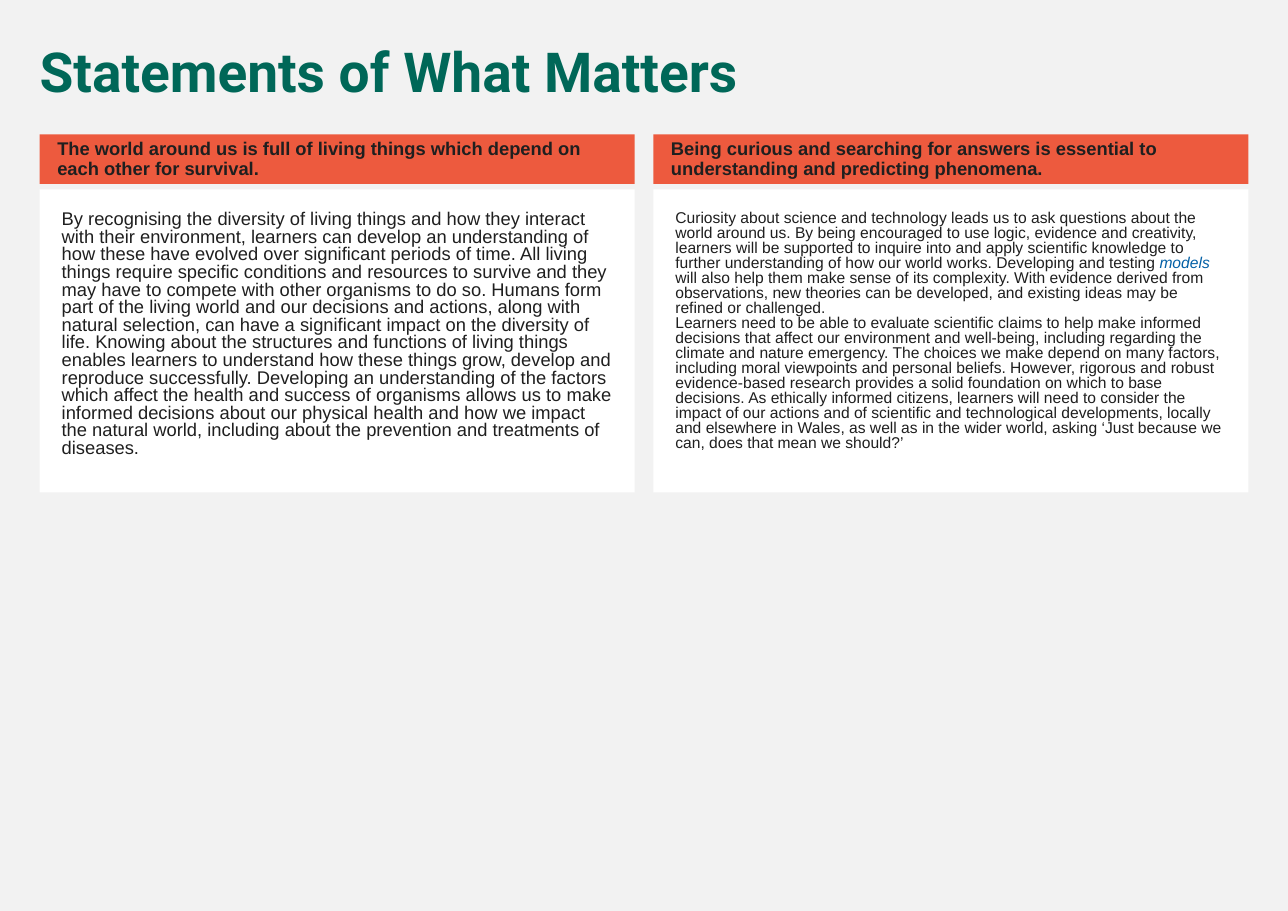
from pptx import Presentation, util as u
from pptx.dml.color import RGBColor
from pptx.enum import text as t
from lxml import etree

WIDTH, HEIGHT = 11.69, 8.27
MARGIN, GUTTER = 0.36, 0.17
COLUMN = (WIDTH - 2 * MARGIN - GUTTER) / 2
HEADING_TOP, HEADING_HEIGHT = 1.22, 0.45
BODY_TOP, BODY_HEIGHT = 1.72, 2.75
INK, LINK, GREEN, ORANGE = "1F1F1F", "0360A6", "006758", "ED5A3E"
WHITE, GREY = "FFFFFF", "F2F2F2"

STATEMENTS = [
    {
        "heading": "The world around us is full of living things which depend on each other for survival.",
        "size": 12,
        "before": 11,
        "body": [[
            "By recognising the diversity of living things and how they interact with their "
            "environment, learners can develop an understanding of how these have evolved over "
            "significant periods of time. All living things require specific conditions and "
            "resources to survive and they may have to compete with other organisms to do so. ",
            "Humans form part of the living world and our decisions and actions, along with "
            "natural selection, can have a significant impact on the diversity of life. Knowing "
            "about the structures and functions of living things enables learners to understand "
            "how these things grow, develop and reproduce successfully. ",
            "Developing an understanding of the factors which affect the health and success of "
            "organisms allows us to make informed decisions about our physical health and "
            "how we impact the natural world, including about the prevention and treatments "
            "of diseases.",
        ]],
    },
    {
        "heading": "Being curious and searching for answers is essential to understanding "
                   "and predicting phenomena.",
        "size": 10.2,
        "before": 0,
        "body": [
            [
                "Curiosity about science and technology leads us to ask questions about the world "
                "around us. By being encouraged to use logic, evidence and creativity, learners "
                "will be supported to inquire into and apply scientific knowledge to further "
                "understanding of how our world works. Developing and testing ",
                ("models", LINK),
                " will also help them make sense of its complexity. With evidence derived from "
                "observations, new theories can be developed, and existing ideas may be refined "
                "or challenged.",
            ],
            [
                "Learners need to be able to evaluate scientific claims to help make informed "
                "decisions that affect our environment and well-being, including "
                "regarding the climate and nature emergency. The choices we make depend on "
                "many factors, including moral viewpoints and personal beliefs. ",
                "However, rigorous and robust evidence-based research provides a solid foundation "
                "on which to base decisions. As ethically informed citizens, learners will need to "
                "consider the impact of our actions and of scientific and technological "
                "developments, locally and elsewhere in Wales, as well as in the wider world, "
                "asking ‘Just because we can, does that mean we should?’",
            ],
        ],
    },
]


def paint(target, color):
    """Fill a shape or background with a solid hex colour."""
    target.fill.solid()
    target.fill.fore_color.rgb = RGBColor.from_string(color)


def place(holder, box, insets, anchor):
    """Move a placeholder to its box and set up its text frame."""
    holder.left, holder.top, holder.width, holder.height = map(u.Inches, box)
    frame = holder.text_frame
    frame.word_wrap = True
    frame.auto_size = t.MSO_AUTO_SIZE.NONE
    frame.vertical_anchor = anchor
    (frame.margin_left, frame.margin_top,
     frame.margin_right, frame.margin_bottom) = map(u.Inches, insets)
    return frame


def write(frame, paragraphs, size, spacing, before, color=INK, font="Arial", bold=False):
    """Write unbulleted paragraphs run by run; a (text, colour) run is italic."""
    for number, runs in enumerate(paragraphs):
        line = frame.add_paragraph() if number else frame.paragraphs[0]
        line.alignment = t.PP_ALIGN.LEFT
        line.line_spacing, line.space_before = spacing, u.Pt(before)
        props = line._p.get_or_add_pPr()
        props.set("marL", "0")
        props.set("indent", "0")
        etree.SubElement(props, props.tag.replace("pPr", "buNone"))
        for part in runs:
            words, ink = part if isinstance(part, tuple) else (part, color)
            run = line.add_run()
            run.text = words
            run.font.name, run.font.size, run.font.bold = font, u.Pt(size), bold
            run.font.italic = isinstance(part, tuple)
            run.font.color.rgb = RGBColor.from_string(ink)


def add_title(holder, box):
    """Set the slide title in its box."""
    frame = place(holder, box, (0.1, 0.05, 0.1, 0.05), t.MSO_ANCHOR.TOP)
    write(frame, [["Statements of What Matters"]], 36, 0.9, 11, GREEN, "Roboto", True)


def add_statement(heading, body, left, statement):
    """Set one column: an orange heading bar above a white text panel."""
    paint(heading, ORANGE)
    bar = place(heading, (left, HEADING_TOP, COLUMN, HEADING_HEIGHT),
                (0.16, 0.05, 0.1, 0.05), t.MSO_ANCHOR.MIDDLE)
    write(bar, [[statement["heading"]]], 12, 0.9, 11, bold=True)
    paint(body, WHITE)
    panel = place(body, (left, BODY_TOP, COLUMN, BODY_HEIGHT), (0.2,) * 4, t.MSO_ANCHOR.TOP)
    write(panel, statement["body"], statement["size"], 0.8, statement["before"])


def main():
    """Build the slide and save it."""
    deck = Presentation()
    deck.slide_width, deck.slide_height = u.Inches(WIDTH), u.Inches(HEIGHT)
    slide = deck.slides.add_slide(deck.slide_layouts.get_by_name("Comparison"))
    paint(slide.background, GREY)
    title, *columns = slide.placeholders
    add_title(title, (MARGIN - 0.1, 0.36, WIDTH - 2 * MARGIN + 0.1, 0.65))
    for number, statement in enumerate(STATEMENTS):
        heading, body = columns[2 * number:2 * number + 2]
        add_statement(heading, body, MARGIN + number * (COLUMN + GUTTER), statement)
    deck.save("out.pptx")


if __name__ == "__main__":
    main()
